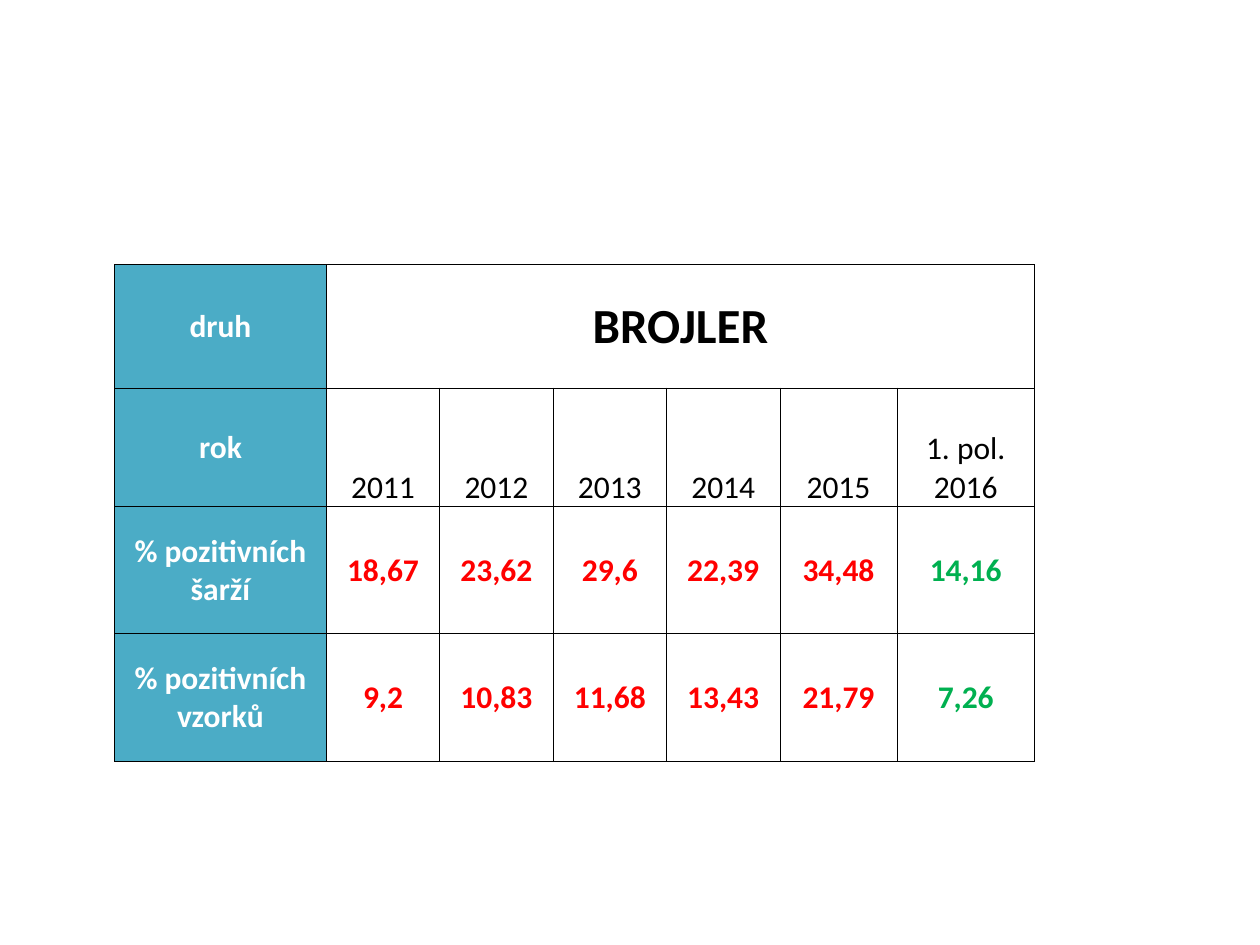
from lxml import etree
from pptx import Presentation
from pptx.dml.color import RGBColor
from pptx.enum import text
from pptx.oxml import ns
from pptx.util import Inches, Pt

WHITE = RGBColor(0xFF, 0xFF, 0xFF)
BLACK = RGBColor(0, 0, 0)
TEAL = RGBColor(0x4B, 0xAC, 0xC6)
RED = RGBColor(0xFF, 0, 0)
GREEN = RGBColor(0, 0xB0, 0x50)
MIDDLE = text.MSO_ANCHOR.MIDDLE
BOTTOM = text.MSO_ANCHOR.BOTTOM

WIDTHS = [1.68, 0.9, 0.9, 0.9, 0.9, 0.93, 1.09]
HEIGHTS = [0.98, 0.94, 1.01, 1.01]
ROWS = [
    ["druh", "BROJLER", "", "", "", "", ""],
    ["rok", "2011", "2012", "2013", "2014", "2015", "1. pol. 2016"],
    ["% pozitivních šarží", "18,67", "23,62", "29,6", "22,39", "34,48", "14,16"],
    ["% pozitivních vzorků", "9,2", "10,83", "11,68", "13,43", "21,79", "7,26"],
]


def write(cell, words, size=18, color=BLACK, bold=True, anchor=MIDDLE):
    cell.vertical_anchor = anchor
    cell.margin_left = cell.margin_right = cell.margin_top = Inches(0.01)
    cell.margin_bottom = 0
    para = cell.text_frame.paragraphs[0]
    para.alignment = text.PP_ALIGN.CENTER
    run = para.add_run()
    run.text = words
    run.font.name = "Calibri"
    run.font.size = Pt(size)
    run.font.bold = bold
    run.font.color.rgb = color


def frame(cell, color=BLACK, width=0.5):
    """Draw a line on all four sides; borders must precede the fill in tcPr."""
    props = cell._tc.get_or_add_tcPr()
    for place, side in enumerate(("lnL", "lnR", "lnT", "lnB")):
        line = etree.Element(ns.qn("a:" + side), w=str(Pt(width)))
        fill = etree.SubElement(line, ns.qn("a:solidFill"))
        etree.SubElement(fill, ns.qn("a:srgbClr"), val=str(color))
        props.insert(place, line)


prs = Presentation()
prs.slide_width, prs.slide_height = Inches(10), Inches(7.5)
slide = prs.slides.add_slide(prs.slide_layouts[6])

table = slide.shapes.add_table(
    len(HEIGHTS), len(WIDTHS), Inches(0.91), Inches(2.1),
    Inches(sum(WIDTHS)), Inches(sum(HEIGHTS))).table
table.first_row = table.horz_banding = False
for col, width in zip(table.columns, WIDTHS):
    col.width = Inches(width)
for row, height in zip(table.rows, HEIGHTS):
    row.height = Inches(height)
table.cell(0, 1).merge(table.cell(0, 6))

for r, row in enumerate(ROWS):
    for c, words in enumerate(row):
        cell = table.cell(r, c)
        if c == 0:
            cell.fill.solid()
            cell.fill.fore_color.rgb = TEAL
        else:
            cell.fill.background()
        frame(cell)
        if cell.is_spanned:
            continue
        if c == 0:
            write(cell, words, color=WHITE)
        elif r == 0:
            write(cell, words, size=28)
        elif r == 1:
            write(cell, words, bold=False, anchor=BOTTOM)
        else:
            write(cell, words, color=GREEN if c == 6 else RED)

prs.save("out.pptx")
